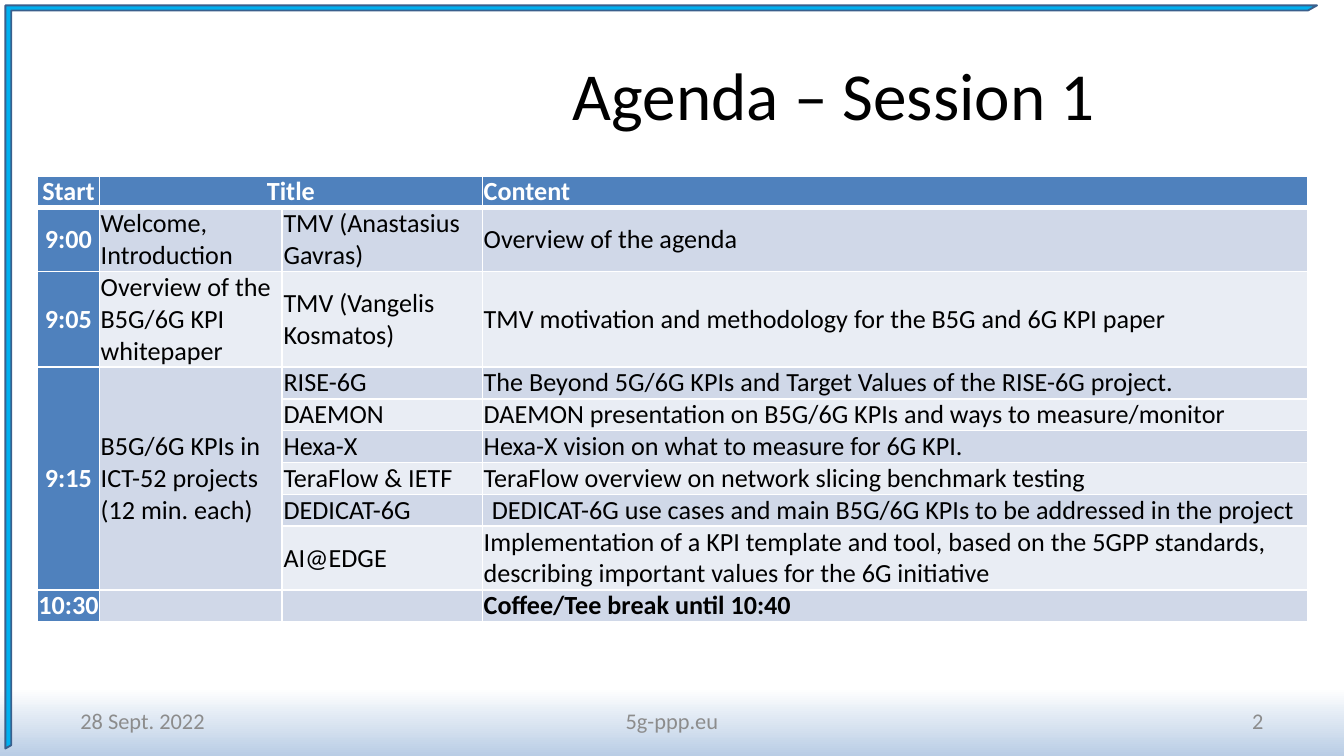
from dataclasses import dataclass

from lxml import etree
from pptx import Presentation
from pptx.dml.color import RGBColor
from pptx.enum.shapes import MSO_SHAPE
from pptx.enum.text import MSO_ANCHOR, PP_ALIGN
from pptx.oxml.ns import qn
from pptx.util import Inches, Pt

HALF_FRAME = MSO_SHAPE.HALF_FRAME
MIDDLE = MSO_ANCHOR.MIDDLE
LEFT, CENTER, RIGHT = PP_ALIGN.LEFT, PP_ALIGN.CENTER, PP_ALIGN.RIGHT
TITLE_ONLY = 5
SLIDE_WIDTH = 10
SLIDE_HEIGHT = SLIDE_WIDTH * 9 / 16


@dataclass(frozen=True)
class Theme:
    font: str = "Calibri"
    title_size: int = 36
    table_size: int = 14
    footer_size: int = 12
    text: str = "000000"
    white: str = "FFFFFF"
    footer: str = "8C8C8C"
    header: str = "4F81BD"
    bands: tuple = ("D0D8E8", "E9EDF4")
    glow: str = "B9CDE5"
    frame: str = "00B0F0"
    frame_line: str = "3A5F8C"


THEME = Theme()

# Each row: start, title, speaker or project, content
AGENDA = [
    ("Start", "Title", "", "Content"),
    ("9:00", "Welcome, Introduction", "TMV (Anastasius Gavras)", "Overview of the agenda"),
    ("9:05", "Overview of the B5G/6G KPI whitepaper", "TMV (Vangelis Kosmatos)",
     "TMV motivation and methodology for the B5G and 6G KPI paper"),
    ("9:15", "B5G/6G KPIs in ICT-52 projects (12 min. each)", "RISE-6G",
     "The Beyond 5G/6G KPIs and Target Values of the RISE-6G project."),
    ("", "", "DAEMON", "DAEMON presentation on B5G/6G KPIs and ways to measure/monitor"),
    ("", "", "Hexa-X", "Hexa-X vision on what to measure for 6G KPI."),
    ("", "", "TeraFlow & IETF", "TeraFlow overview on network slicing benchmark testing"),
    ("", "", "DEDICAT-6G",
     "DEDICAT-6G use cases and main B5G/6G KPIs to be addressed in the project"),
    ("", "", "AI@EDGE",
     "Implementation of a KPI template and tool, based on the 5GPP standards, "
     "describing important values for the 6G initiative"),
    ("10:30", "", "", "Coffee/Tee break until 10:40"),
]
ROW_LINES = (1, 2, 3, 1, 1, 1, 1, 1, 2, 1)
LINE_HEIGHT = 0.23
COLUMN_WIDTHS = (0.46, 1.36, 1.49, 6.14)
MERGES = [((0, 1), (0, 2)), ((3, 0), (8, 0)), ((3, 1), (8, 1))]
WIDE_INSET_CELL = (7, 3)


def rgb(value):
    return RGBColor.from_string(value)


def write(frame, text, size, color, align=LEFT, bold=False):
    frame.word_wrap = True
    frame.vertical_anchor = MIDDLE
    paragraph = frame.paragraphs[0]
    paragraph.alignment = align
    run = paragraph.add_run()
    run.text = text
    run.font.name = THEME.font
    run.font.size = Pt(size)
    run.font.bold = bold
    run.font.color.rgb = rgb(color)


def add_border(cell, side, width):
    line = etree.SubElement(cell._tc.get_or_add_tcPr(), qn(f"a:ln{side}"), w=str(Pt(width)))
    fill = etree.SubElement(line, qn("a:solidFill"))
    etree.SubElement(fill, qn("a:srgbClr"), val=THEME.white)


def add_backdrop(slide, left, top, width, height):
    fill = slide.background.fill
    fill.gradient()
    fill.gradient_angle = 270
    stops = ((0.91, THEME.white), (1, THEME.glow))
    for stop, (position, color) in zip(fill.gradient_stops, stops):
        stop.position = position
        stop.color.rgb = rgb(color)

    corner = slide.shapes.add_shape(
        HALF_FRAME, Inches(left), Inches(top), Inches(width), Inches(height))
    corner.shadow.inherit = False
    corner.adjustments[0] = 0.007
    corner.adjustments[1] = 0.008
    corner.fill.solid()
    corner.fill.fore_color.rgb = rgb(THEME.frame)
    corner.line.color.rgb = rgb(THEME.frame_line)
    corner.line.width = Pt(1)


def add_title(slide, left, top, width, height):
    title = slide.shapes.title
    title.left, title.top = Inches(left), Inches(top)
    title.width, title.height = Inches(width), Inches(height)
    write(title.text_frame, "Agenda – Session 1", THEME.title_size, THEME.text, CENTER)


def style_cell(cell, row, column):
    is_header = row == 0
    is_accent = is_header or column == 0
    is_break = row == len(AGENDA) - 1

    # Insets: none for the start times, a hairline elsewhere
    inset = 0 if column == 0 else 0.07 if (row, column) == WIDE_INSET_CELL else 0.01
    cell.margin_left = cell.margin_right = Inches(inset)
    cell.margin_top = cell.margin_bottom = 0
    cell.vertical_anchor = MIDDLE

    # Borders come before the fill; the rule under the header is heavier
    for side in "LRTB":
        heavy = (row, side) in ((0, "B"), (1, "T"))
        add_border(cell, side, 3 if heavy else 1)
    cell.fill.solid()
    cell.fill.fore_color.rgb = rgb(THEME.header if is_accent else THEME.bands[(row - 1) % 2])

    text = AGENDA[row][column]
    if text:
        centered = column == 0 or (is_header and column == 1)
        write(cell.text_frame, text, THEME.table_size,
              THEME.white if is_accent else THEME.text,
              CENTER if centered else LEFT, is_accent or is_break)
    else:
        # Keeps empty cells from stretching their row
        etree.SubElement(cell.text_frame.paragraphs[0]._p, qn("a:endParaRPr"),
                         sz=str(THEME.table_size * 100))


def add_agenda(slide, left, top):
    table = slide.shapes.add_table(
        len(AGENDA), len(COLUMN_WIDTHS), Inches(left), Inches(top),
        Inches(sum(COLUMN_WIDTHS)), Inches(LINE_HEIGHT * sum(ROW_LINES))).table
    for column, width in zip(table.columns, COLUMN_WIDTHS):
        column.width = Inches(width)
    for row, lines in zip(table.rows, ROW_LINES):
        row.height = Inches(LINE_HEIGHT * lines)
    for row in range(len(AGENDA)):
        for column in range(len(COLUMN_WIDTHS)):
            style_cell(table.cell(row, column), row, column)
    for first, last in MERGES:
        table.cell(*first).merge(table.cell(*last))


def add_footer(slide, left, top, width, height):
    side, middle = 2.33, 3.17
    parts = [
        (left, side, "28 Sept. 2022", LEFT),
        (left + (width - middle) / 2, middle, "5g-ppp.eu", CENTER),
        (left + width - side, side, "2", RIGHT),
    ]
    for x, part_width, text, align in parts:
        part = slide.shapes.add_textbox(
            Inches(x), Inches(top), Inches(part_width), Inches(height))
        write(part.text_frame, text, THEME.footer_size, THEME.footer, align)


def main():
    deck = Presentation()
    deck.slide_width, deck.slide_height = Inches(SLIDE_WIDTH), Inches(SLIDE_HEIGHT)
    slide = deck.slides.add_slide(deck.slide_layouts[TITLE_ONLY])
    add_backdrop(slide, 0.04, 0.04, 9.76, 5.53)
    add_title(slide, 2.91, 0.23, 6.59, 0.94)
    add_agenda(slide, 0.28, 1.31)
    add_footer(slide, 0.5, 5.21, 9, 0.3)
    deck.save("out.pptx")


if __name__ == "__main__":
    main()
